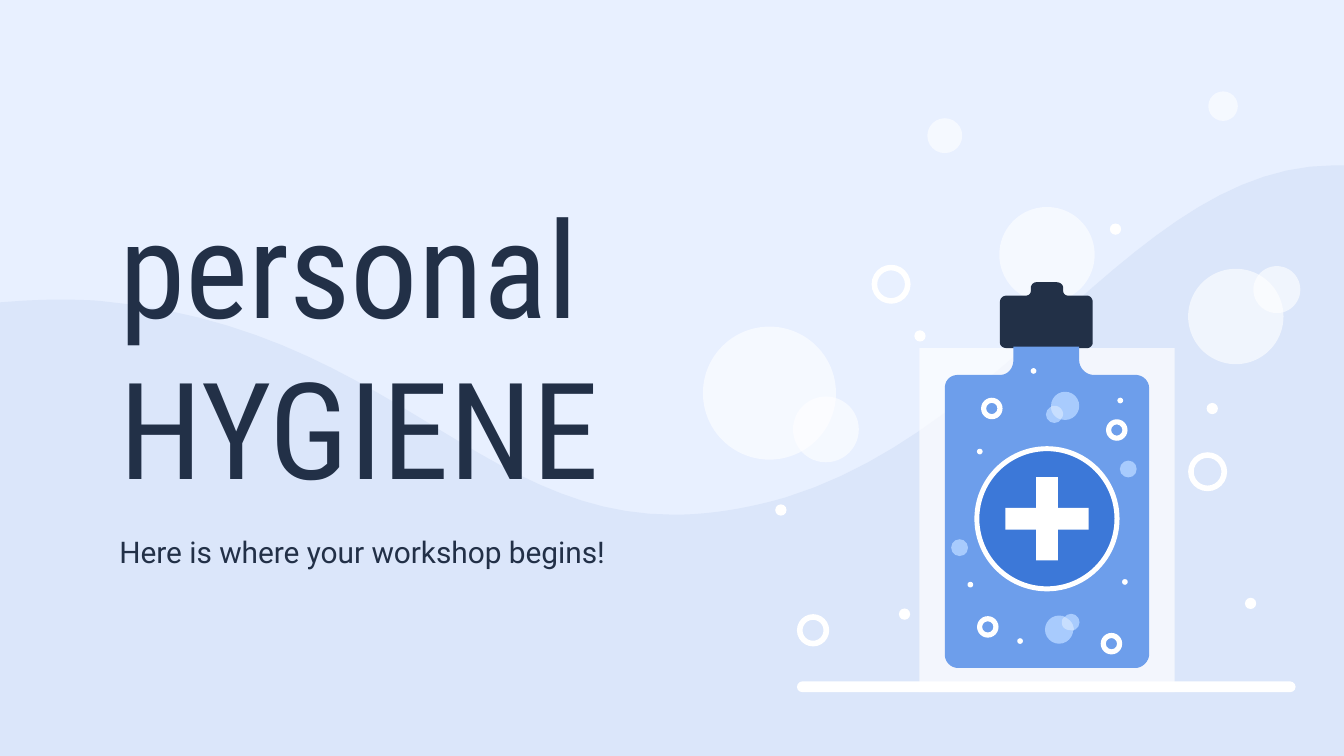
"""Build a title slide about personal hygiene with a sanitizer bottle among bubbles."""
import lxml.etree
import pptx
import pptx.dml.color
import pptx.enum.shapes
import pptx.enum.text
import pptx.oxml.ns
import pptx.util

RGBColor = pptx.dml.color.RGBColor
SHAPE = pptx.enum.shapes.MSO_SHAPE

SKY = RGBColor(0xE8, 0xF0, 0xFF)
WAVE = RGBColor(0xDB, 0xE6, 0xFA)
INK = RGBColor(0x22, 0x30, 0x47)
WHITE = RGBColor(0xFF, 0xFF, 0xFF)
LIQUID = RGBColor(0x6D, 0x9E, 0xEB)
BADGE = RGBColor(0x3C, 0x78, 0xD8)
FOAM = RGBColor(0xA8, 0xCB, 0xFD)
FOAM_OVERLAP = RGBColor(0xC7, 0xDE, 0xFE)

COLUMNS, ROWS = 100, 56.25
CURVE_STEPS = 24

WAVE_OUTLINE = [
    (99.3, 12.3), (84.7, 12.3, 75.6, 31.7, 58.5, 37),
    (55.4, 37.9, 52.6, 38.3, 50.1, 38.3), (35.4, 38.3, 28.6, 24.3, 7.5, 22.4),
    (6.4, 22.3, 5.3, 22.3, 4.2, 22.3), (2.7, 22.3, 1.3, 22.4, 0, 22.5),
    (0, ROWS), (COLUMNS, ROWS), (COLUMNS, 12.3),
]
CAP_OUTLINE = [
    (80.9, 25.9), (81.1, 25.9, 81.3, 25.7, 81.3, 25.5), (81.3, 22.5),
    (81.3, 22.2, 81.1, 22, 80.9, 22), (79.5, 22), (79.3, 22, 79.1, 21.9, 79.1, 21.6),
    (79.1, 21.4), (79.1, 21.2, 78.9, 21, 78.6, 21), (77.1, 21),
    (76.9, 21, 76.7, 21.2, 76.7, 21.4), (76.7, 21.6),
    (76.7, 21.9, 76.5, 22, 76.3, 22), (74.9, 22), (74.6, 22, 74.4, 22.2, 74.4, 22.5),
    (74.4, 25.5), (74.4, 25.7, 74.6, 25.9, 74.9, 25.9),
]
BOTTLE_OUTLINE = [
    (84.5, 49.7), (85, 49.7, 85.5, 49.2, 85.5, 48.7), (85.5, 28.9),
    (85.5, 28.3, 85, 27.9, 84.5, 27.9), (81.4, 27.9),
    (80.8, 27.9, 80.3, 27.4, 80.3, 26.8), (80.3, 25.8), (75.4, 25.8), (75.4, 26.8),
    (75.4, 27.4, 75, 27.9, 74.4, 27.9), (71.3, 27.9),
    (70.7, 27.9, 70.3, 28.3, 70.3, 28.9), (70.3, 48.7),
    (70.3, 49.2, 70.7, 49.7, 71.3, 49.7),
]
FOAM_OVERLAPS = [
    [(79.7, 46.9), (79.8, 46.9, 79.9, 46.9, 79.9, 46.9),
     (79.9, 46.4, 79.6, 46.1, 79.2, 45.9), (79.1, 46, 79, 46.1, 79, 46.3),
     (79, 46.7, 79.3, 46.9, 79.7, 46.9)],
    [(78.9, 31.2), (79, 31.1, 79.1, 31, 79.1, 30.8), (79.1, 30.5, 78.8, 30.2, 78.5, 30.2),
     (78.4, 30.2, 78.2, 30.2, 78.2, 30.3), (78.2, 30.7, 78.5, 31.1, 78.9, 31.2)],
]

MISTY_BUBBLES = [
    (77.9, 18.95, 7.1), (70.3, 10.1, 2.6), (91, 7.9, 2.2), (57.25, 29.25, 9.9),
    (61.45, 31.95, 4.9), (91.95, 23.55, 7.1), (95, 21.55, 3.5),
]
AIR_DOTS = [
    (68.45, 25), (83, 17.05), (90.2, 30.4), (67.3, 45.7), (93.05, 44.9), (58.1, 37.95),
]
AIR_RINGS = [(66.3, 21.15, 2.9), (89.85, 35.1, 2.9), (60.5, 46.9, 2.4)]
BOTTLE_RINGS = [(83.1, 32), (73.8, 30.4), (73.5, 46.65), (82.7, 47.9)]
FOAM_BUBBLES = [
    (79.7, 46.3, 1.25), (71.4, 40.75, 1.25), (78.45, 30.85, 1.25), (83.95, 34.9, 1.25),
    (78.8, 46.85, 2.1), (79.25, 30.2, 2.1),
]
BOTTLE_DOTS = [
    (83.7, 43.3), (72.2, 43.5), (76.9, 27.6), (72.9, 33.6), (83.35, 29.8), (75.9, 47.7),
]


def grid(cells):
    """Turn a count of grid cells into a length."""
    return pptx.util.Inches(cells / 10)


def paint(shape, color, opacity=100):
    """Fill a shape with one colour, without line or shadow."""
    shape.shadow.inherit = False
    shape.line.fill.background()
    shape.fill.solid()
    shape.fill.fore_color.rgb = color
    if opacity < 100:
        qualify = pptx.oxml.ns.qn
        color_element = shape.element.spPr.find(".//" + qualify("a:srgbClr"))
        alpha = lxml.etree.SubElement(color_element, qualify("a:alpha"))
        alpha.set("val", str(opacity * 1000))


def add_preset(slide, kind, left, top, width, height, color, opacity=100, adjustment=None):
    """Add a filled preset shape placed on the grid."""
    shape = slide.shapes.add_shape(kind, grid(left), grid(top), grid(width), grid(height))
    if adjustment is not None:
        shape.adjustments[0] = adjustment
    paint(shape, color, opacity)


def add_round(slide, center_x, center_y, size, color, opacity=100, kind=SHAPE.OVAL, adjustment=None):
    """Add a preset shape of equal sides around a centre."""
    add_preset(slide, kind, center_x - size / 2, center_y - size / 2, size, size,
               color, opacity, adjustment)


def add_ring(slide, center_x, center_y, size, thickness):
    """Add a white ring around a centre."""
    add_round(slide, center_x, center_y, size, WHITE,
              kind=SHAPE.DONUT, adjustment=thickness / size)


def trace(outline):
    """Return the points of an outline of lines and cubic curves."""
    points = [outline[0]]
    for segment in outline[1:]:
        if len(segment) == 2:
            points.append(segment)
            continue
        controls = [points[-1], segment[:2], segment[2:4], segment[4:]]
        for step in range(1, CURVE_STEPS + 1):
            t = step / CURVE_STEPS
            weights = ((1 - t) ** 3, 3 * t * (1 - t) ** 2, 3 * t * t * (1 - t), t ** 3)
            points.append(tuple(
                sum(weight * control[axis] for weight, control in zip(weights, controls))
                for axis in (0, 1)))
    return points


def add_outline(slide, outline, color):
    """Add a filled freeform from an outline on the grid."""
    points = [(grid(x), grid(y)) for x, y in trace(outline)]
    builder = slide.shapes.build_freeform(*points[0])
    builder.add_line_segments(points[1:], close=True)
    paint(builder.convert_to_shape(), color)


def write_text(shape, text, font_name, size, anchor):
    """Write one left-aligned run into a shape."""
    frame = shape.text_frame
    frame.auto_size = pptx.enum.text.MSO_AUTO_SIZE.NONE
    frame.word_wrap = True
    frame.vertical_anchor = anchor
    frame.margin_left = frame.margin_right = grid(1)
    frame.margin_top = frame.margin_bottom = grid(1)
    paragraph = frame.paragraphs[0]
    paragraph.alignment = pptx.enum.text.PP_ALIGN.LEFT
    paragraph.line_spacing = 1.0
    run = paragraph.add_run()
    run.text = text
    run.font.name = font_name
    run.font.size = pptx.util.Pt(size)
    run.font.color.rgb = INK


def add_headings(slide):
    """Place the title above the wave and add the subtitle."""
    title = slide.shapes.title
    slide.shapes.element.append(title.element)
    title.left, title.top, title.width, title.height = map(grid, (7.9, 13.1, 44.9, 25.6))
    write_text(title, "personal HYGIENE", "Roboto Condensed", 72,
               pptx.enum.text.MSO_ANCHOR.BOTTOM)
    subtitle = slide.shapes.add_textbox(*map(grid, (7.9, 38.7, 50.4, 4.4)))
    write_text(subtitle, "Here is where your workshop begins!", "Roboto", 16,
               pptx.enum.text.MSO_ANCHOR.TOP)


def add_air_bubbles(slide):
    """Add the bubbles floating around the bottle."""
    for center_x, center_y, size in MISTY_BUBBLES:
        add_round(slide, center_x, center_y, size, WHITE, 60)
    for center_x, center_y, size in AIR_RINGS:
        add_ring(slide, center_x, center_y, size, 0.42)
    for center_x, center_y in AIR_DOTS:
        add_round(slide, center_x, center_y, 0.84, WHITE)


def add_bottle(slide):
    """Add the bottle with its cap, badge and inner bubbles."""
    add_preset(slide, SHAPE.RECTANGLE, 68.4, 25.9, 19, 25.6, WHITE, 68)
    add_outline(slide, CAP_OUTLINE, INK)
    add_outline(slide, BOTTLE_OUTLINE, LIQUID)
    add_round(slide, 77.9, 38.6, 10.4, BADGE)
    add_ring(slide, 77.9, 38.6, 10.8, 0.37)
    add_round(slide, 77.9, 38.6, 6.2, WHITE, kind=SHAPE.CROSS, adjustment=0.37)
    for center_x, center_y in BOTTLE_RINGS:
        add_ring(slide, center_x, center_y, 1.6, 0.38)
    for center_x, center_y, size in FOAM_BUBBLES:
        add_round(slide, center_x, center_y, size, FOAM)
    for outline in FOAM_OVERLAPS:
        add_outline(slide, outline, FOAM_OVERLAP)
    for center_x, center_y in BOTTLE_DOTS:
        add_round(slide, center_x, center_y, 0.42, WHITE)


def main():
    """Build and save the presentation."""
    presentation = pptx.Presentation()
    presentation.slide_width, presentation.slide_height = grid(COLUMNS), grid(ROWS)
    slide = presentation.slides.add_slide(presentation.slide_layouts.get_by_name("Title Only"))
    slide.background.fill.solid()
    slide.background.fill.fore_color.rgb = SKY
    add_outline(slide, WAVE_OUTLINE, WAVE)
    add_headings(slide)
    add_air_bubbles(slide)
    add_bottle(slide)
    add_preset(slide, SHAPE.ROUNDED_RECTANGLE, 59.3, 50.7, 37.1, 0.8, WHITE, adjustment=0.5)
    presentation.save("out.pptx")


if __name__ == "__main__":
    main()
